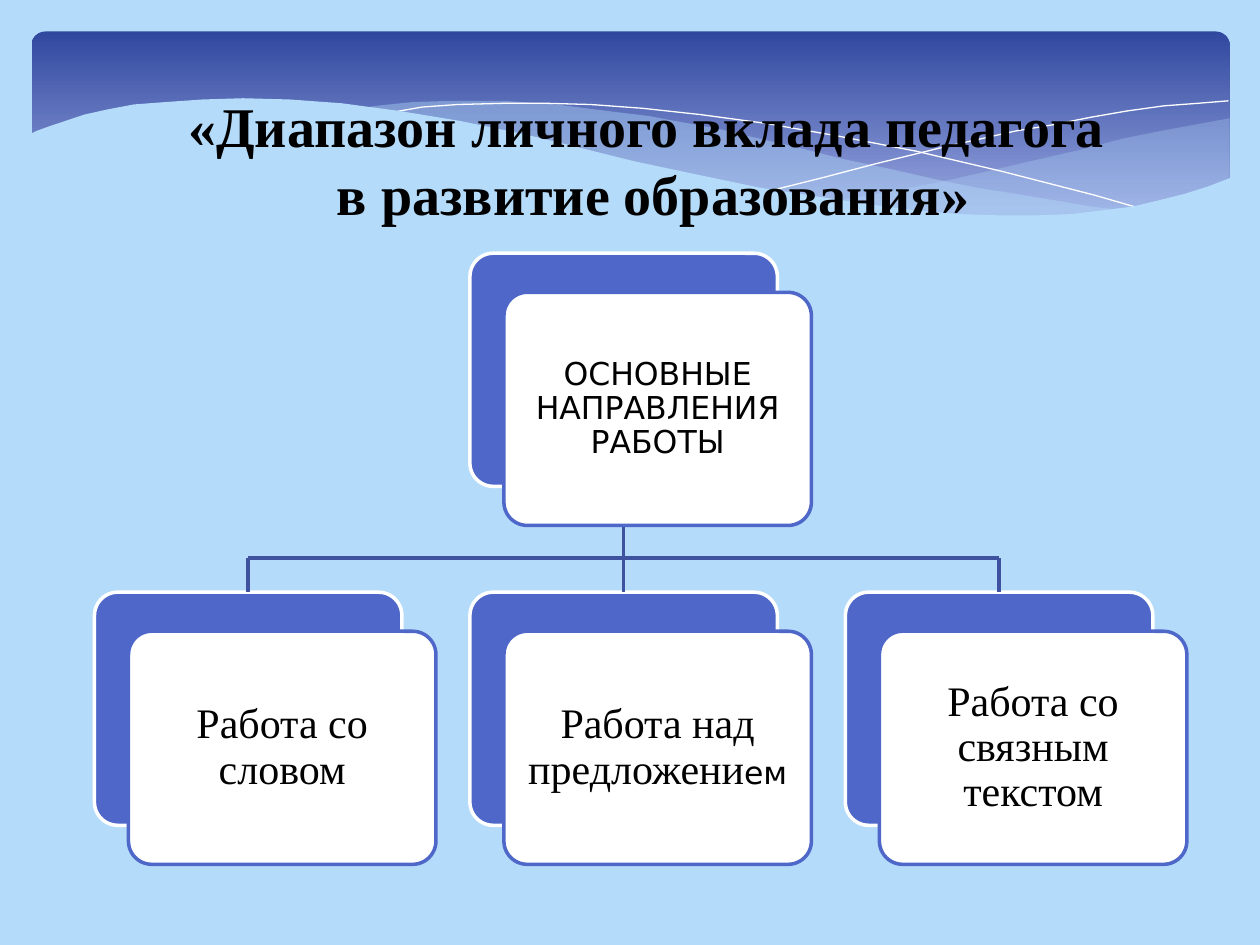
from dataclasses import dataclass
from typing import Any, Optional

from lxml.etree import SubElement
from pptx import Presentation
from pptx.dml.color import RGBColor
from pptx.enum.shapes import MSO_CONNECTOR as Connector, MSO_SHAPE as Shape
from pptx.enum.text import MSO_ANCHOR as Anchor, PP_ALIGN as Align
from pptx.oxml.ns import qn
from pptx.util import Inches, Pt

SKY = RGBColor(0xB4, 0xDC, 0xFA)
DEEP_BLUE = RGBColor(0x31, 0x48, 0x9F)
PALE_BLUE = RGBColor(0x95, 0xA4, 0xDE)
BLUE = RGBColor(0x4E, 0x67, 0xC8)
LINE_BLUE = RGBColor(0x3E, 0x52, 0xA0)
WHITE = RGBColor(0xFF, 0xFF, 0xFF)
BLACK = RGBColor(0, 0, 0)

SERIF, SANS = "Times New Roman", "DejaVu Sans"
CARD_WIDTH, CARD_HEIGHT = 2.44, 1.85
CARD_LEFT, CARD_PITCH = 0.75, 2.98
PARENT_TOP, CHILD_TOP, BUS_TOP = 2.01, 4.7, 4.43
FRONT_SHIFT_X, FRONT_SHIFT_Y = 0.27, 0.31
TITLE_LINES = ("«Диапазон личного вклада педагога", " в развитие образования»")


@dataclass
class Wave:
    """Outline in hundredths of an inch; filled if it has an opacity, else a line."""
    points: list[tuple[int, int]]
    opacity: Optional[int] = None


@dataclass
class Run:
    text: str
    size: int = 24
    font: str = SERIF
    bold: bool = False


@dataclass
class Card:
    column: int
    top: float
    runs: list[Run]

    @property
    def left(self) -> float:
        return CARD_LEFT + self.column * CARD_PITCH


WAVES = [
    Wave([(975, 94), (948, 99), (921, 104), (891, 110), (861, 118), (805, 131),
          (753, 143), (706, 152), (661, 160), (691, 164), (719, 167), (745, 169),
          (769, 171), (792, 172), (835, 172), (863, 170), (889, 166), (913, 162),
          (935, 156), (949, 152), (963, 147), (976, 141), (976, 94)], 29),
    Wave([(893, 167), (866, 164), (837, 159), (807, 154), (775, 149), (741, 142),
          (706, 134), (668, 126), (629, 116), (598, 109), (569, 102), (541, 97),
          (514, 92), (489, 89), (442, 83), (399, 80), (361, 80), (328, 81),
          (299, 84), (286, 86), (323, 90), (362, 97), (404, 106), (449, 116),
          (530, 135), (584, 146), (634, 156), (680, 163), (722, 168), (761, 171),
          (796, 173), (828, 173), (857, 171), (876, 169), (893, 167)], 40),
    Wave([(309, 90), (318, 88), (335, 85), (363, 83), (401, 82), (433, 82),
          (469, 83), (510, 86), (556, 91), (608, 98), (665, 108), (727, 120),
          (795, 136), (869, 155), (907, 166)]),
    Wave([(613, 151), (653, 141), (695, 130), (748, 117), (806, 104), (836, 99),
          (866, 93), (895, 88), (924, 84), (951, 82), (975, 80)]),
    Wave([(977, 141), (959, 148), (940, 154), (920, 159), (899, 164), (875, 167),
          (850, 170), (823, 171), (793, 171), (761, 170), (726, 167), (688, 162),
          (648, 156), (603, 149), (555, 139), (503, 128), (447, 114), (418, 107),
          (365, 96), (316, 88), (271, 82), (230, 79), (193, 78), (161, 79),
          (132, 81), (106, 83), (85, 87), (67, 91), (52, 96), (40, 100),
          (29, 104), (23, 107), (23, 224), (977, 224)], 100),
]

PARENT = Card(1, PARENT_TOP, [Run("ОСНОВНЫЕ НАПРАВЛЕНИЯ РАБОТЫ", 18, SANS)])
CHILDREN = [
    Card(0, CHILD_TOP, [Run("Работа со словом")]),
    Card(1, CHILD_TOP, [Run("Работа над предложени"), Run("ем", 18, SANS)]),
    Card(2, CHILD_TOP, [Run("Работа со связным текстом")]),
]


def set_values(target: Any, values: dict[str, Any]) -> None:
    for name, value in values.items():
        setattr(target, name, value)


def set_margins(frame: Any, margin: float) -> None:
    sides = ("left", "top", "right", "bottom")
    set_values(frame, {f"margin_{side}": Inches(margin) for side in sides})


def paint(shape: Any, color: RGBColor) -> None:
    shape.fill.solid()
    shape.fill.fore_color.rgb = color


def outline(shape: Any, color: RGBColor, width: float) -> None:
    shape.line.color.rgb = color
    shape.line.width = Pt(width)


def add_runs(paragraph: Any, runs: list[Run]) -> None:
    for item in runs:
        run = paragraph.add_run()
        run.text = item.text
        set_values(run.font, {"name": item.font, "size": Pt(item.size), "bold": item.bold})
        run.font.color.rgb = BLACK


def add_round_box(shapes: Any, left: float, top: float, width: float,
                  height: float, rounding: float) -> Any:
    box = shapes.add_shape(Shape.ROUNDED_RECTANGLE, Inches(left), Inches(top),
                           Inches(width), Inches(height))
    box.adjustments[0] = rounding
    box.shadow.inherit = False
    return box


def add_banner(shapes: Any) -> None:
    banner = add_round_box(shapes, 0.25, 0.25, 9.51, 1.56, 0.07)
    banner.line.fill.background()
    banner.fill.gradient()
    banner.fill.gradient_angle = 270
    stops = zip(banner.fill.gradient_stops, (DEEP_BLUE, PALE_BLUE), (0, 0.9))
    for stop, color, position in stops:
        stop.color.rgb = color
        stop.position = position


def add_wave(shapes: Any, wave: Wave) -> None:
    filled = wave.opacity is not None
    builder = shapes.build_freeform(*wave.points[0], scale=Inches(0.01))
    builder.add_line_segments(wave.points[1:], close=filled)
    shape = builder.convert_to_shape()
    shape.shadow.inherit = False
    if not filled:
        shape.fill.background()
        outline(shape, WHITE, 0)
        return
    paint(shape, SKY)
    shape.line.fill.background()
    if wave.opacity < 100:
        color = shape._element.spPr.find(qn("a:solidFill"))[0]
        SubElement(color, qn("a:alpha")).set("val", str(wave.opacity * 1000))


def add_title(shapes: Any) -> None:
    box = shapes.add_textbox(Inches(0.8), Inches(0.68), Inches(8.66), Inches(0.98))
    box.text_frame.word_wrap = True
    paragraph = box.text_frame.paragraphs[0]
    paragraph.alignment = Align.CENTER
    for number, text in enumerate(TITLE_LINES):
        if number:
            paragraph.add_line_break()
        add_runs(paragraph, [Run(text, 32, SERIF, True)])


def add_back(shapes: Any, card: Card) -> Any:
    back = add_round_box(shapes, card.left, card.top, CARD_WIDTH, CARD_HEIGHT, 0.1)
    paint(back, BLUE)
    outline(back, WHITE, 2)
    return back


def add_front(shapes: Any, card: Card) -> None:
    front = add_round_box(shapes, card.left + FRONT_SHIFT_X, card.top + FRONT_SHIFT_Y,
                          CARD_WIDTH, CARD_HEIGHT, 0.1)
    paint(front, WHITE)
    outline(front, BLUE, 2)
    frame = front.text_frame
    set_values(frame, {"word_wrap": True, "vertical_anchor": Anchor.MIDDLE})
    set_margins(frame, 0.07)
    paragraph = frame.paragraphs[0]
    set_values(paragraph, {"alignment": Align.CENTER, "line_spacing": 0.9})
    add_runs(paragraph, card.runs)


def add_line(shapes: Any, x1: int, y1: int, x2: int, y2: int) -> Any:
    line = shapes.add_connector(Connector.STRAIGHT, x1, y1, x2, y2)
    outline(line, LINE_BLUE, 2)
    SubElement(line._element.spPr, qn("a:effectLst"))
    return line


def add_branches(shapes: Any, parent: Any, children: list[Any]) -> None:
    """Join the parent to its children by a trunk, a bus and drops."""
    bus = Inches(BUS_TOP)
    centers = [child.left + child.width // 2 for child in children]
    add_line(shapes, centers[0], bus, centers[-1], bus)
    for child, center in zip(children, centers):
        line = add_line(shapes, center, bus, center, child.top)
        if child.left == parent.left:
            line.begin_connect(parent, 2)
        line.end_connect(child, 0)


def main() -> None:
    presentation = Presentation()
    set_values(presentation, {"slide_width": Inches(10), "slide_height": Inches(7.5)})
    slide = presentation.slides.add_slide(presentation.slide_layouts[6])
    paint(slide.background, SKY)
    shapes = slide.shapes
    add_banner(shapes)
    for wave in WAVES:
        add_wave(shapes, wave)
    add_title(shapes)
    parent, *children = [add_back(shapes, card) for card in (PARENT, *CHILDREN)]
    add_branches(shapes, parent, children)
    for card in (PARENT, *CHILDREN):
        add_front(shapes, card)
    presentation.save("out.pptx")


if __name__ == "__main__":
    main()
